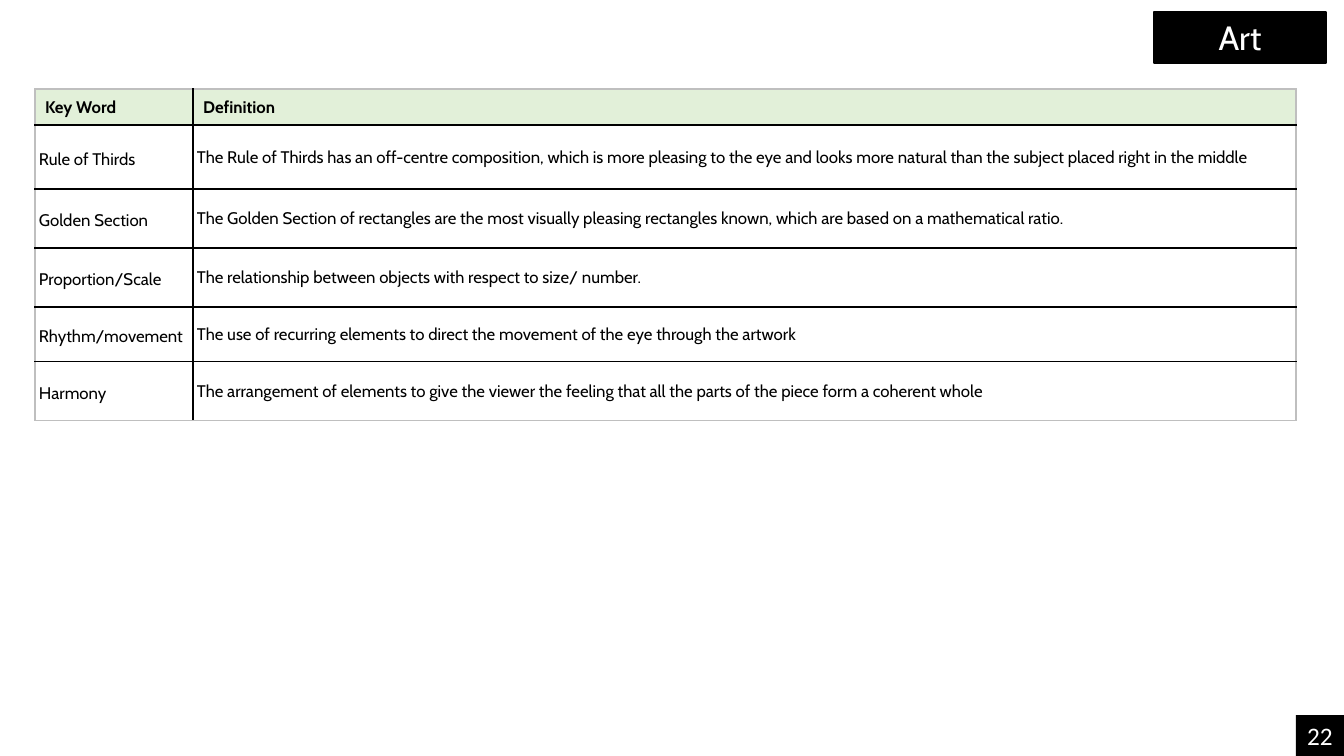
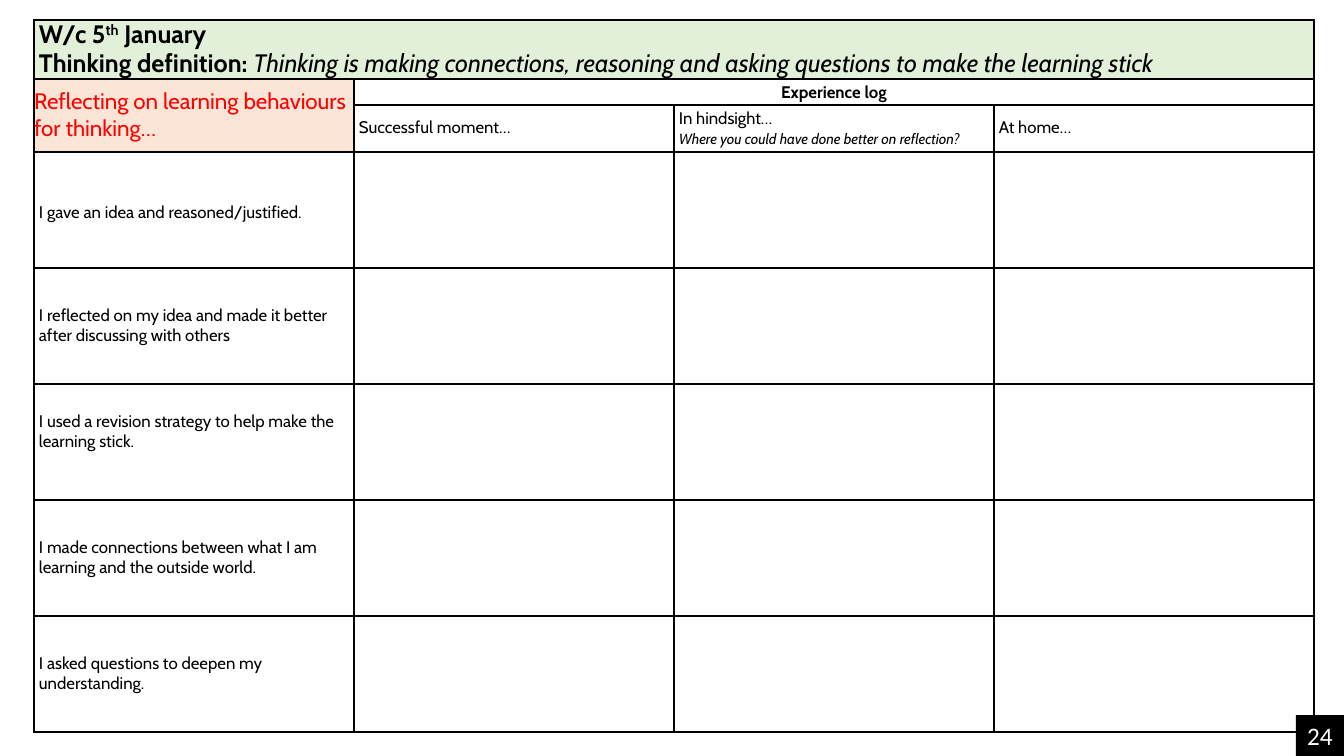
from lxml import etree
from pptx import Presentation, util as u
from pptx.dml.color import RGBColor
from pptx.enum import shapes, text
from pptx.oxml.ns import qn

PX = 9144000 / 1008  # EMU in one px
BLACK, WHITE, RED, GREY = "000000", "FFFFFF", "FF0000", "BFBFBF"
GREEN, PEACH = "E2F0D9", "FBE5D6"
FONT, NUMBER_FONT = "Cabin", "Calibri"
rgb = RGBColor.from_string

prs = Presentation()
prs.slide_width, prs.slide_height = round(1344 * PX), round(756 * PX)


def style(tf, size, color=BLACK, bold=False, italic=False, name=FONT):
    """Format every run of a text frame or paragraph."""
    for p in getattr(tf, "paragraphs", [tf]):
        for r in p.runs:
            f = r.font
            f.size, f.name, f.bold, f.italic = u.Pt(size), name, bold, italic
            f.color.rgb = rgb(color)


def grid(s, left, top, cols, rows, outer):
    """Add an unfilled table with black rules and an outer border colour."""
    x, y, w, h = (round(v * PX) for v in (left, top, sum(cols), sum(rows)))
    tbl = s.shapes.add_table(len(rows), len(cols), x, y, w, h).table
    tbl.first_row = tbl.horz_banding = False
    for col, width in zip(tbl.columns, cols):
        col.width = round(width * PX)
    for row, height in zip(tbl.rows, rows):
        row.height = round(height * PX)
    for i in range(len(rows)):
        for j in range(len(cols)):
            cell = tbl.cell(i, j)
            cell.vertical_anchor = text.MSO_ANCHOR.MIDDLE
            edges = {"L": j == 0, "R": j == len(cols) - 1,
                     "T": i == 0, "B": i == len(rows) - 1}
            for side, at_edge in edges.items():
                ln = etree.SubElement(cell._tc.get_or_add_tcPr(), qn("a:ln" + side), w="12700")
                fill = etree.SubElement(ln, qn("a:solidFill"))
                etree.SubElement(fill, qn("a:srgbClr"), val=outer if at_edge else BLACK)
            cell.fill.background()
    return tbl


# Slide 1: art key words
art = prs.slides.add_slide(prs.slide_layouts[5])
title = art.shapes.title
title.left, title.top, title.width, title.height = (round(v * PX) for v in (1154, 12, 172, 51))
title.fill.solid()
title.fill.fore_color.rgb = rgb(BLACK)
title.line.color.rgb = rgb(BLACK)
title.line.width = u.Pt(1)
tf = title.text_frame
tf.text = "Art"
tf.auto_size = text.MSO_AUTO_SIZE.NONE
tf.vertical_anchor = text.MSO_ANCHOR.MIDDLE
tf.paragraphs[0].alignment = text.PP_ALIGN.CENTER
style(tf, 24, WHITE)

words = [
    ("Key Word", "Definition"),
    ("Rule of Thirds", "The Rule of Thirds has an off-centre composition, which is more pleasing "
     "to the eye and looks more natural than the subject placed right in the middle"),
    ("Golden Section", "The Golden Section of rectangles are the most visually pleasing rectangles "
     "known, which are based on a mathematical ratio."),
    ("Proportion/Scale", "The relationship between objects with respect to size/ number."),
    ("Rhythm/movement", "The use of recurring elements to direct the movement of the eye through "
     "the artwork"),
    ("Harmony", "The arrangement of elements to give the viewer the feeling that all the parts "
     "of the piece form a coherent whole"),
]
tbl = grid(art, 35, 89, [158, 1103], [36, 64, 59, 59, 55, 59], GREY)
for i, row in enumerate(words):
    for j, words_in_cell in enumerate(row):
        cell = tbl.cell(i, j)
        cell.text_frame.text = words_in_cell
        style(cell.text_frame, 12, bold=i == 0)
        if i == 0:
            cell.fill.solid()
            cell.fill.fore_color.rgb = rgb(GREEN)
            continue
        cell.margin_left = cell.margin_right = round(4 * PX)
        cell.margin_top = cell.margin_bottom = round(4 * PX)
        if j == 0:
            p = cell.text_frame.paragraphs[0]
            p.line_spacing, p.space_after = 1.19, u.Pt(6)

# Slide 2: thinking log
log = prs.slides.add_slide(prs.slide_layouts[6])
tbl = grid(log, 34, 20, [320] * 4, [59, 26, 47] + [116] * 5, BLACK)
for cell in tbl.iter_cells():
    cell.margin_left = round(5 * PX)
    cell.margin_right = cell.margin_top = cell.margin_bottom = 0
tbl.cell(0, 0).merge(tbl.cell(0, 3))
tbl.cell(1, 0).merge(tbl.cell(2, 0))
tbl.cell(1, 1).merge(tbl.cell(1, 3))

# Banner with the week and the definition
banner = tbl.cell(0, 0)
banner.fill.solid()
banner.fill.fore_color.rgb = rgb(GREEN)
tf = banner.text_frame
tf.text = "W/c 5\nThinking definition: "
week, definition = tf.paragraphs
ordinal = week.add_run()
ordinal.text = "th"
week.add_run().text = " January"
meaning = definition.add_run()
meaning.text = ("Thinking is making connections, reasoning and asking questions "
                "to make the learning stick")
style(tf, 18, bold=True)
ordinal._r.get_or_add_rPr().set("baseline", "30000")
meaning.font.bold, meaning.font.italic = False, True
week.line_spacing = definition.line_spacing = u.Pt(20.9)

# Column headings
prompt = tbl.cell(1, 0)
prompt.margin_left = 0
prompt.fill.solid()
prompt.fill.fore_color.rgb = rgb(PEACH)
prompt.text_frame.text = "Reflecting on learning behaviours for thinking…"
style(prompt.text_frame, 16, RED)

heading = tbl.cell(1, 1)
heading.margin_left = 0
heading.text_frame.text = "Experience log"
heading.text_frame.paragraphs[0].alignment = text.PP_ALIGN.CENTER
style(heading.text_frame, 12, bold=True)

moments = ["Successful moment…",
           "In hindsight…\nWhere you could have done better on reflection?",
           "At home…"]
for j, moment in enumerate(moments, 1):
    tf = tbl.cell(2, j).text_frame
    tf.text = moment
    style(tf, 12)
    for p in tf.paragraphs:
        p.line_spacing = u.Pt(13.9)
    for p in tf.paragraphs[1:]:
        style(p, 10.5, italic=True)

# Learning behaviours: text, line spacing in points, bottom margin in px
behaviours = [
    ("I gave an idea and reasoned/justified.", 18.6, 0),
    ("I reflected on my idea and made it better after discussing with others", 14, 0),
    ("I used a revision strategy to help make the learning stick.", 14, 20),
    ("I made connections between what I am learning and the outside world.", 14, 0),
    ("I asked questions to deepen my understanding.", 14, 0),
]
for i, (behaviour, spacing, bottom) in enumerate(behaviours, 3):
    cell = tbl.cell(i, 0)
    cell.margin_bottom = round(bottom * PX)
    cell.text_frame.text = behaviour
    cell.text_frame.paragraphs[0].line_spacing = u.Pt(spacing)
    style(cell.text_frame, 12)

# Page numbers
for s, number in ((art, "22"), (log, "24")):
    sp = s.shapes.add_shape(shapes.MSO_SHAPE.RECTANGLE,
                            *(round(v * PX) for v in (1296, 715, 48, 41)))
    sp.shadow.inherit = False
    sp.fill.solid()
    sp.fill.fore_color.rgb = rgb(BLACK)
    sp.line.fill.background()
    tf = sp.text_frame
    tf.text = number
    tf.vertical_anchor = text.MSO_ANCHOR.MIDDLE
    tf.paragraphs[0].alignment = text.PP_ALIGN.CENTER
    style(tf, 18, WHITE, name=NUMBER_FONT)

prs.save("out.pptx")
